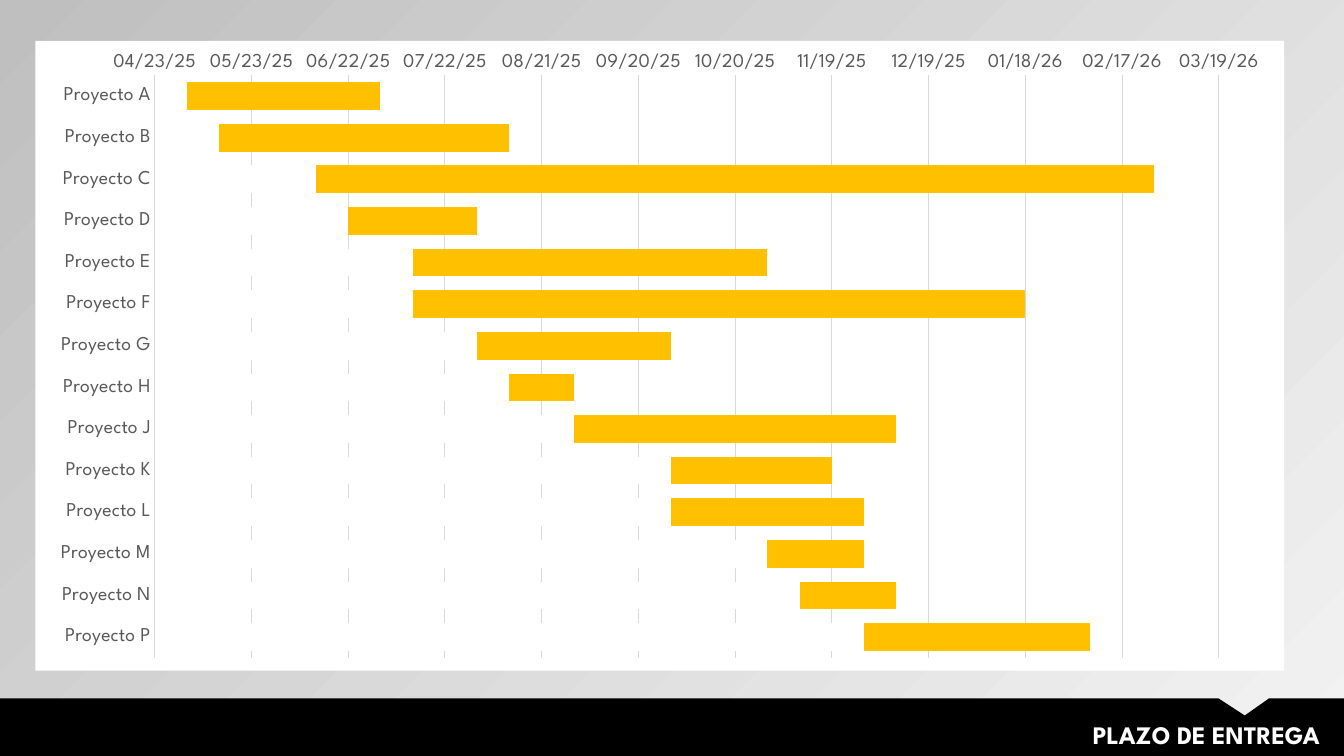
from lxml.etree import fromstring
from pptx import Presentation
from pptx.chart.data import CategoryChartData
from pptx.dml.color import RGBColor
from pptx.enum.chart import XL_CHART_TYPE, XL_TICK_MARK
from pptx.enum.text import MSO_ANCHOR, PP_ALIGN
from pptx.oxml.ns import nsdecls
from pptx.util import Cm, Pt

FONT = "League Spartan"
CHART_WIDTH, CHART_HEIGHT = 31.47, 15.87
PROJECTS = [
    ("A", 45780, 45840),
    ("B", 45790, 45880),
    ("C", 45820, 46080),
    ("D", 45830, 45870),
    ("E", 45850, 45960),
    ("F", 45850, 46040),
    ("G", 45870, 45930),
    ("H", 45880, 45900),
    ("J", 45900, 46000),
    ("K", 45930, 45980),
    ("L", 45930, 45990),
    ("M", 45960, 45990),
    ("N", 45970, 46000),
    ("P", 45990, 46060),
]


def paint(fill, color):
    fill.solid()
    fill.fore_color.rgb = RGBColor.from_string(color)


def style_font(font, size, color):
    font.name = FONT
    font.size = Pt(size)
    font.color.rgb = RGBColor.from_string(color)


deck = Presentation()
deck.slide_width = Cm(33.87)
deck.slide_height = Cm(19.05)
page = deck.slides.add_slide(deck.slide_layouts[5])

backdrop = page.background.fill
backdrop.gradient()
backdrop.gradient_angle = 135
for stop, color in zip(backdrop.gradient_stops, ["F2F2F2", "BFBFBF"]):
    stop.color.rgb = RGBColor.from_string(color)

outline = [(30.71, 17.6), (31.37, 18.03), (31.98, 17.6), (33.87, 17.6), (33.87, 19.05), (0, 19.05)]
builder = page.shapes.build_freeform(Cm(0), Cm(17.6))
builder.add_line_segments([(Cm(x), Cm(y)) for x, y in outline], close=True)
footer = builder.convert_to_shape()
footer.shadow.inherit = False
paint(footer.fill, "000000")
footer.line.fill.background()

title = page.shapes.title
title.element.addprevious(footer.element)
title.left, title.top, title.width, title.height = Cm(10.52), Cm(18), Cm(23), Cm(1.02)
title.text_frame.text = "PLAZO DE ENTREGA"
title.text_frame.vertical_anchor = MSO_ANCHOR.MIDDLE
para = title.text_frame.paragraphs[0]
para.alignment = PP_ALIGN.RIGHT
para.font.bold = True
style_font(para.font, 18, "FFFFFF")

data = CategoryChartData()
data.categories = [f"Proyecto {letter}" for letter, start, end in PROJECTS]
data.add_series("Series 1", [end for letter, start, end in PROJECTS])
data.add_series("Series 2", [start for letter, start, end in PROJECTS])
chart = page.shapes.add_chart(
    XL_CHART_TYPE.BAR_CLUSTERED, Cm(0.89), Cm(1.03), Cm(CHART_WIDTH), Cm(CHART_HEIGHT), data
).chart
chart.has_title = False
chart.has_legend = False
style_font(chart.font, 14, "000000")

plot = chart.plots[0]
plot.gap_width = 50
plot.overlap = 100
plot.vary_by_categories = False
for series, color in zip(plot.series, ["FFC000", "FFFFFF"]):
    paint(series.format.fill, color)
    series.format.line.fill.background()

projects_axis = chart.category_axis
projects_axis.reverse_order = True
dates_axis = chart.value_axis
dates_axis.minimum_scale = 45770
dates_axis.maximum_scale = 46100
dates_axis.major_unit = 30
dates_axis.has_major_gridlines = True
dates_axis.tick_labels.number_format = "mm/dd/yy;@"
dates_axis.tick_labels.number_format_is_linked = False
dates_axis.format.line.fill.background()
for axis in (projects_axis, dates_axis):
    axis.major_tick_mark = XL_TICK_MARK.NONE
    axis.minor_tick_mark = XL_TICK_MARK.NONE
    style_font(axis.tick_labels.font, 14, "595959")
for line in (projects_axis.format.line, dates_axis.major_gridlines.format.line):
    paint(line.fill, "D9D9D9")
    line.width = Pt(0.75)

plot_area = chart.element.xpath("c:chart/c:plotArea")[0]
for layout in plot_area.xpath("c:layout"):
    plot_area.remove(layout)
plot_area.insert(0, fromstring(
    f'<c:layout {nsdecls("c")}><c:manualLayout><c:layoutTarget val="inner"/>'
    '<c:xMode val="edge"/><c:yMode val="edge"/>'
    f'<c:x val="{3.01 / CHART_WIDTH}"/><c:y val="{0.87 / CHART_HEIGHT}"/>'
    f'<c:w val="{26.82 / CHART_WIDTH}"/><c:h val="{14.68 / CHART_HEIGHT}"/>'
    '</c:manualLayout></c:layout>'
))
chart.element.xpath("c:chart")[0].addnext(fromstring(
    f'<c:spPr {nsdecls("c", "a")}><a:solidFill><a:srgbClr val="FFFFFF"/></a:solidFill>'
    '<a:ln><a:noFill/></a:ln></c:spPr>'
))

deck.save("out.pptx")
